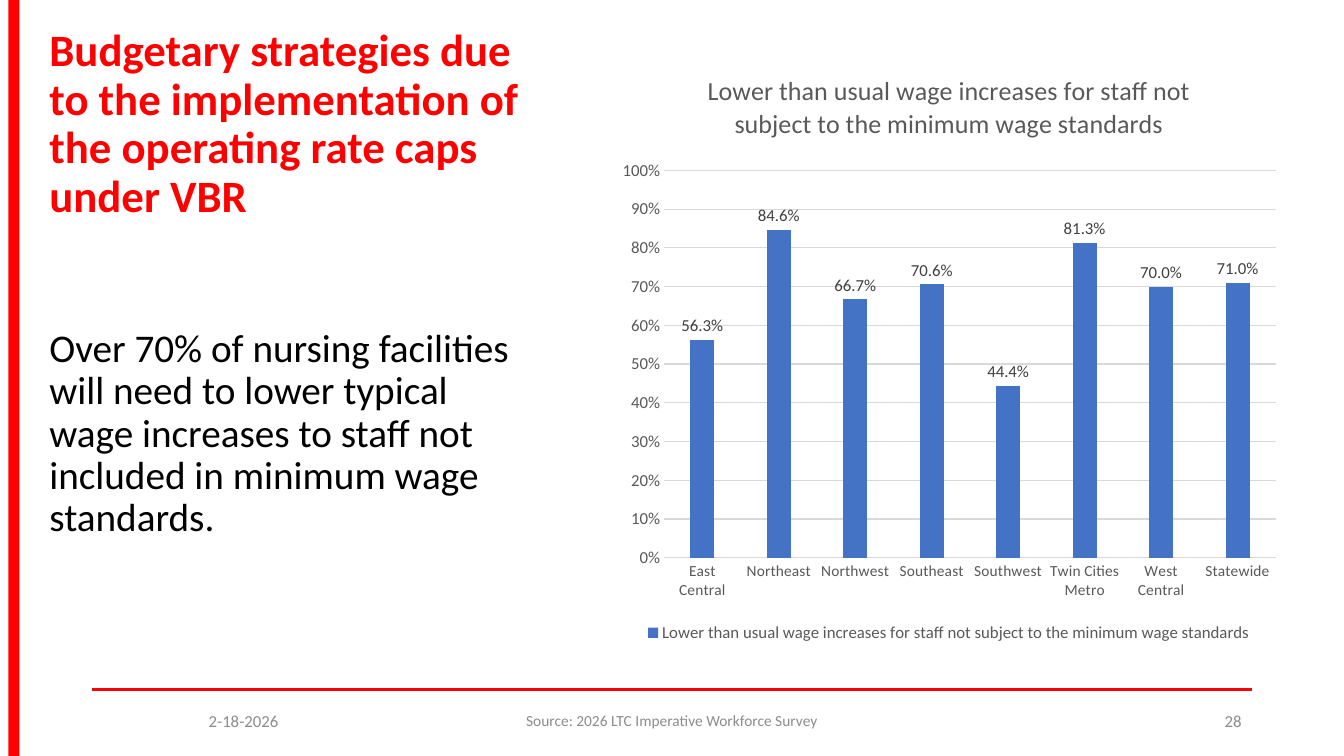
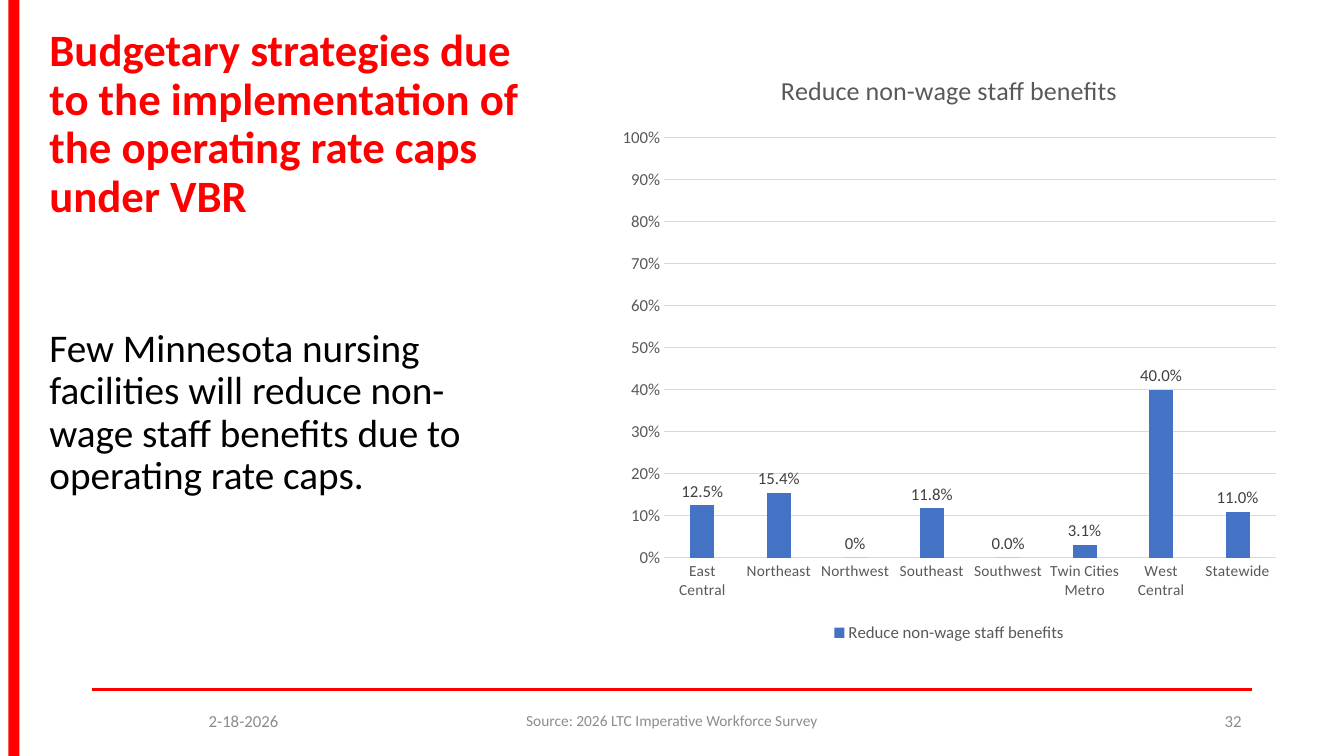
import pptx
import pptx.chart.data
import pptx.dml.color
import pptx.enum.chart
import pptx.enum.shapes
import pptx.enum.text
import pptx.oxml
import pptx.oxml.ns
import pptx.util

HUES = {
    "red": "FF0000", "ink": "000000", "foot": "8C8C8C", "bar": "4472C4",
    "grid": "D9D9D9", "axis": "595959", "label": "404040",
}
FONT = "Calibri"
# The slide is a grid of 160 columns by 90 rows
COLS, ROWS = 160, 90
CELL = pptx.util.Inches(7.5) // ROWS
LEFT = 4.7
RULE = (11, 149, 82.1)

TITLE = ("Budgetary strategies due to the implementation of "
         "the operating rate caps under VBR")
ZONES = ["East Central", "Northeast", "Northwest", "Southeast", "Southwest",
         "Twin Cities Metro", "West Central", "Statewide"]
PAGES = [
    {"page": "28",
     "body": "Over 70% of nursing facilities will need to lower typical wage "
             "increases to staff not included in minimum wage standards.",
     "name": "Lower than usual wage increases for staff not subject to "
             "the minimum wage standards",
     "vals": [0.563, 0.846, 0.667, 0.706, 0.444, 0.813, 0.7, 0.71],
     "whole": []},
    {"page": "32",
     "body": "Few Minnesota nursing facilities will reduce non-wage staff "
             "benefits due to operating rate caps.",
     "name": "Reduce non-wage staff benefits",
     "vals": [0.125, 0.154, 0, 0.118, 0, 0.031, 0.4, 0.11],
     "whole": [2]},
]


def grid(*cells):
    return [round(n * CELL) for n in cells]


def hue(key):
    return pptx.dml.color.RGBColor.from_string(HUES[key])


def style(font, size, key, bold=False):
    font.name = FONT
    font.size = pptx.util.Pt(size)
    font.bold = bold
    font.color.rgb = hue(key)


def text(slide, words, box, size=12, key="foot", bold=False,
         align="LEFT", anchor="MIDDLE", lead=1.0, top=0.6):
    frame = slide.shapes.add_textbox(*grid(*box)).text_frame
    frame.word_wrap = True
    frame.margin_top = grid(top)[0]
    frame.vertical_anchor = getattr(pptx.enum.text.MSO_ANCHOR, anchor)
    para = frame.paragraphs[0]
    para.alignment = getattr(pptx.enum.text.PP_ALIGN, align)
    para.line_spacing = lead
    run = para.add_run()
    run.text = words
    style(run.font, size, key, bold)


def band(slide):
    kind = pptx.enum.shapes.MSO_SHAPE.RECTANGLE
    shape = slide.shapes.add_shape(kind, *grid(1, 0, 1.3, ROWS))
    shape.shadow.inherit = False
    shape.fill.solid()
    shape.fill.fore_color.rgb = hue("red")
    shape.line.fill.background()


def rule(slide):
    start, end, row = RULE
    kind = pptx.enum.shapes.MSO_CONNECTOR.STRAIGHT
    line = slide.shapes.add_connector(kind, *grid(start, row, end, row))
    line.line.color.rgb = hue("red")
    line.line.width = pptx.util.Pt(2)
    props = line._element.spPr
    props.append(pptx.oxml.parse_xml(
        "<a:effectLst %s/>" % pptx.oxml.ns.nsdecls("a")))


def base(slide, page):
    # Red band, title, rule and footer on every slide
    rule(slide)
    band(slide)
    text(slide, TITLE, (LEFT, 6, 60.4, 21), size=32, key="red", bold=True,
         anchor="BOTTOM", lead=0.9)
    row, high = 83.4, 4.8
    text(slide, "2-18-2026", (11, row, 36, high), align="CENTER")
    text(slide, "Source: 2026 LTC Imperative Workforce Survey",
         (53, row, 54, high), size=11, align="CENTER")
    text(slide, page, (113, row, 36, high), align="RIGHT")


def axes(chart):
    none = pptx.enum.chart.XL_TICK_MARK.NONE
    for axis, size in ((chart.category_axis, 11), (chart.value_axis, 12)):
        axis.major_tick_mark = axis.minor_tick_mark = none
        style(axis.tick_labels.font, size, "axis")
    zones, rates = chart.category_axis, chart.value_axis
    rates.minimum_scale, rates.maximum_scale = 0, 1
    rates.major_unit = 0.1
    rates.tick_labels.number_format = "0%"
    rates.tick_labels.number_format_is_linked = False
    rates.format.line.fill.background()
    rates.has_major_gridlines = True
    for line in (zones.format.line, rates.major_gridlines.format.line):
        line.color.rgb = hue("grid")
        line.width = pptx.util.Pt(0.75)


def labels(series, whole):
    end = pptx.enum.chart.XL_LABEL_POSITION.OUTSIDE_END
    tags = series.data_labels
    tags.show_value = True
    tags.number_format = "0.0%"
    tags.number_format_is_linked = False
    tags.position = end
    style(tags.font, 12, "label")
    # Points labelled without decimals
    for spot in whole:
        tag = series.points[spot].data_label
        tag.position = end
        style(tag.font, 12, "label")
    for item in tags._element.findall(pptx.oxml.ns.qn("c:dLbl")):
        item.insert(1, pptx.oxml.parse_xml(
            '<c:numFmt %s formatCode="0%%" sourceLinked="0"/>'
            % pptx.oxml.ns.nsdecls("c")))


def bars(slide, name, vals, whole):
    data = pptx.chart.data.CategoryChartData(number_format="0.0%")
    data.categories = ZONES
    data.add_series(name, vals)
    kind = pptx.enum.chart.XL_CHART_TYPE.COLUMN_CLUSTERED
    chart = slide.shapes.add_chart(kind, *grid(72.5, 6, 81, 71), data).chart
    style(chart.font, 10, "ink")
    # Title and legend
    chart.has_title = True
    frame = chart.chart_title.text_frame
    frame.text = name
    style(frame.paragraphs[0].runs[0].font, 18.6, "axis")
    chart.chart_title.include_in_layout = False
    chart.has_legend = True
    chart.legend.position = pptx.enum.chart.XL_LEGEND_POSITION.BOTTOM
    chart.legend.include_in_layout = False
    style(chart.legend.font, 12, "axis")
    axes(chart)
    # Columns
    plot = chart.plots[0]
    plot.gap_width, plot.overlap = 219, -27
    plot.vary_by_categories = False
    series = plot.series[0]
    series.format.fill.solid()
    series.format.fill.fore_color.rgb = hue("bar")
    labels(series, whole)


def main():
    deck = pptx.Presentation()
    deck.slide_width, deck.slide_height = grid(COLS, ROWS)
    for page in PAGES:
        slide = deck.slides.add_slide(deck.slide_layouts[6])
        base(slide, page["page"])
        bars(slide, page["name"], page["vals"], page["whole"])
        text(slide, page["body"], (LEFT, 33.4, 58, 43.7), size=28, key="ink",
             anchor="TOP", lead=0.9, top=5.7)
    deck.save("out.pptx")


if __name__ == "__main__":
    main()
